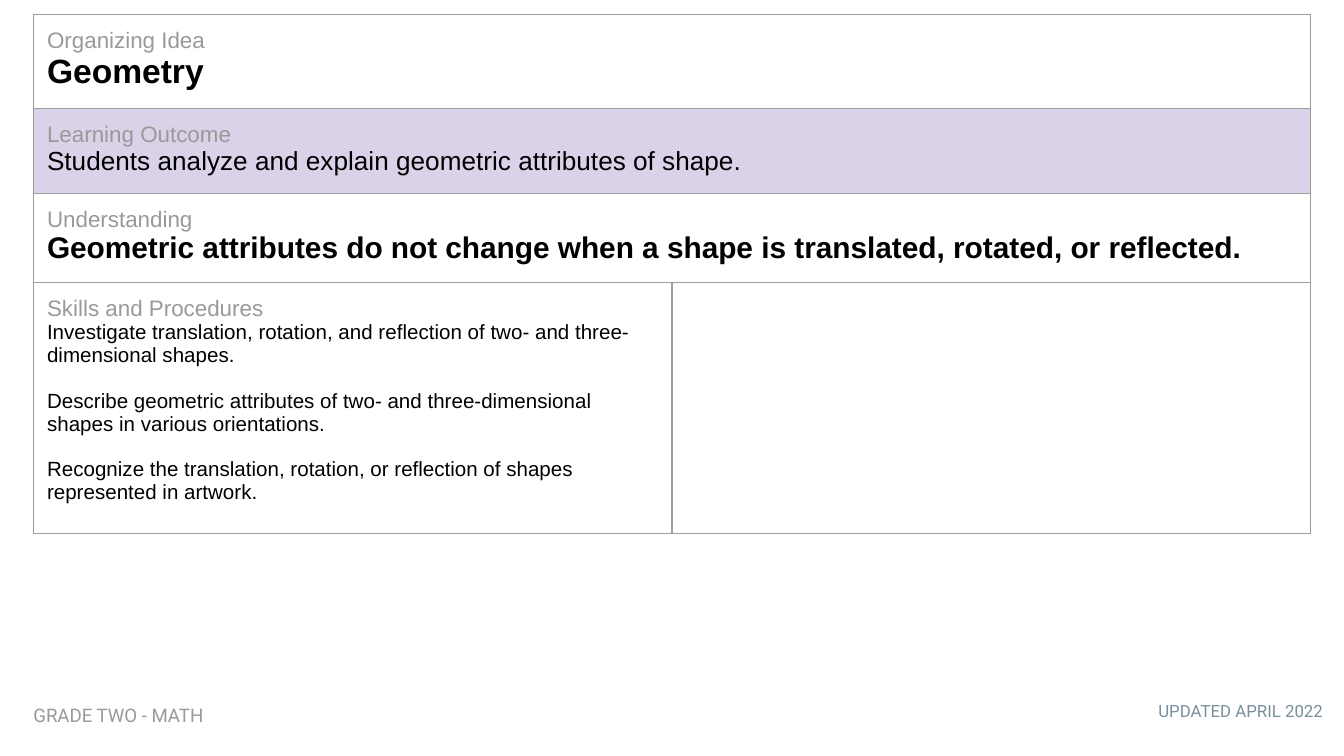
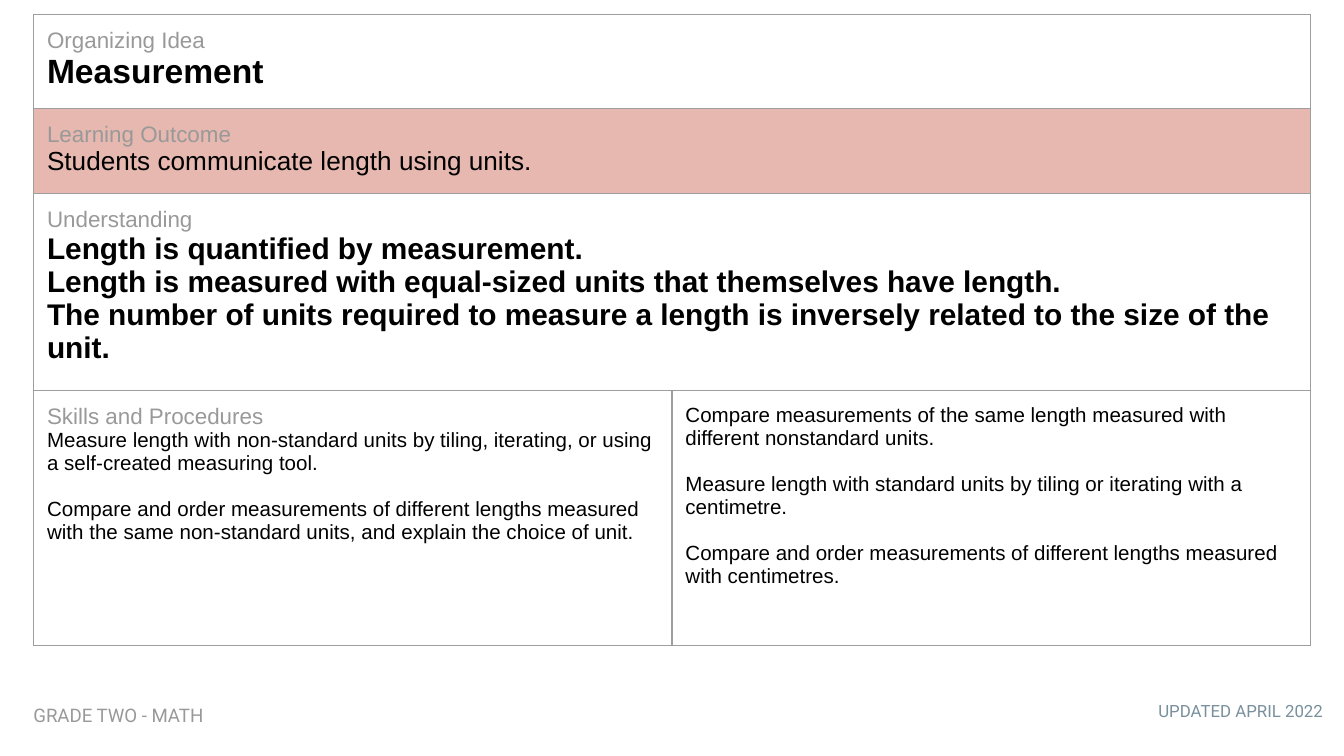
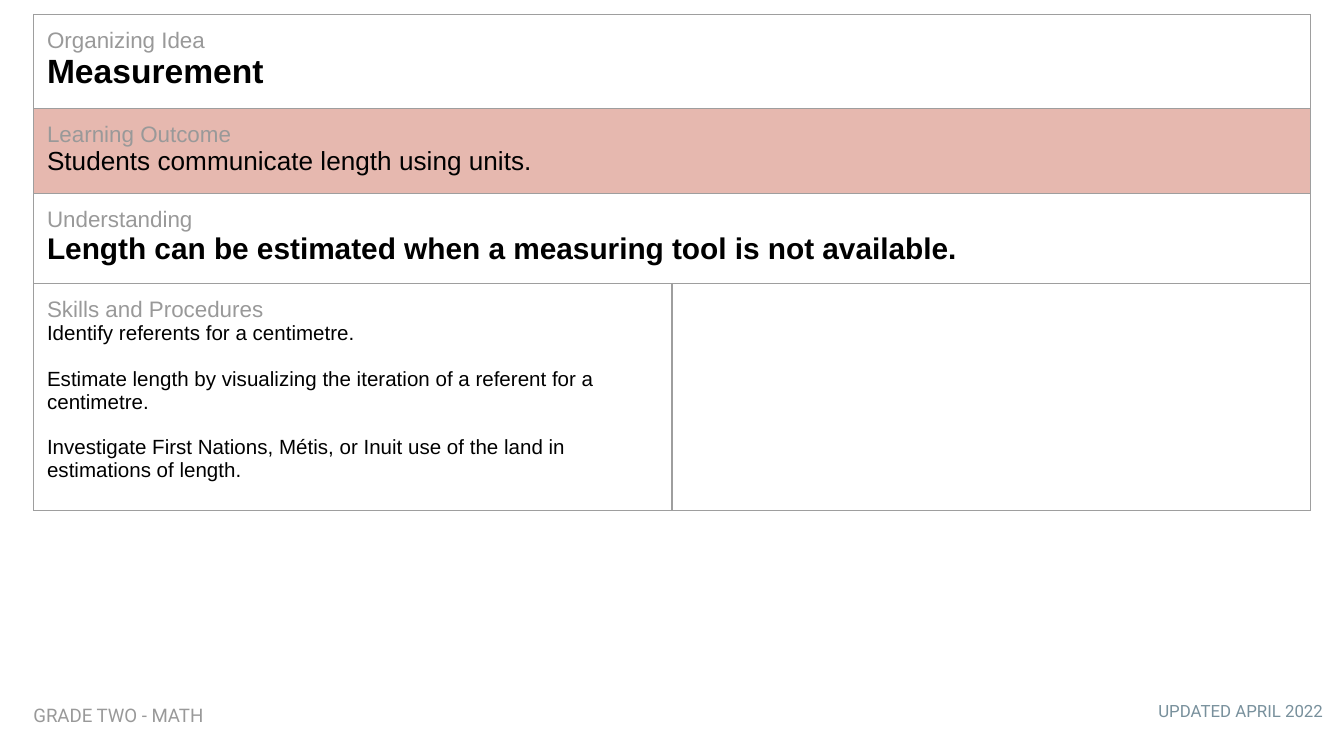
from dataclasses import dataclass

from lxml.etree import SubElement
from pptx import Presentation
from pptx.dml.color import RGBColor
from pptx.enum.text import MSO_AUTO_SIZE as AutoSize, PP_ALIGN as Align
from pptx.oxml.ns import qn
from pptx.util import Pt

# Shared look
BLACK, LABEL_GREY, BORDER_GREY, DATE_BLUE = "000000", "999999", "9E9E9E", "78909C"
GEOMETRY_FILL, MEASUREMENT_FILL = "D9D2E9", "E6B8AF"
BODY_FONT, FOOTER_FONT = "Arial", "Roboto"
INSET = 7.2
SLIDE_WIDTH, SLIDE_HEIGHT = 720, 405
TABLE_LEFT, TABLE_TOP, COLUMN_WIDTH = 18, 7.7, 342
IDEA_HEIGHT, OUTCOME_HEIGHT = 50.4, 45.5
LABEL_SIZE, SKILL_SIZE, SKILL_GAP = 12, 11, 12.3


@dataclass(frozen=True)
class Footer:
    text: str
    left: float
    top: float
    width: float
    height: float
    size: float
    color: str
    align: Align


@dataclass(frozen=True)
class Lesson:
    idea: str
    outcome: str
    fill: str
    understandings: tuple[str, ...]
    understanding_height: float
    skills: tuple[str, ...]
    skills_height: float
    more_skills: tuple[str, ...] = ()


FOOTERS = (
    Footer("UPDATED APRIL 2022", 521.3, 370.1, 194.4, 25.2, 9, DATE_BLUE, Align.RIGHT),
    Footer("GRADE TWO - MATH", 10.8, 370.8, 216.7, 26.6, 10, LABEL_GREY, Align.LEFT),
)

LESSONS = (
    Lesson(
        "Geometry",
        "Students analyze and explain geometric attributes of shape.",
        GEOMETRY_FILL,
        ("Geometric attributes do not change when a shape is translated, rotated, or reflected.",),
        47.7,
        (
            "Investigate translation, rotation, and reflection of two- and three-dimensional shapes.",
            "Describe geometric attributes of two- and three-dimensional shapes in various orientations.",
            "Recognize the translation, rotation, or reflection of shapes represented in artwork.",
        ),
        134.5,
    ),
    Lesson(
        "Measurement",
        "Students communicate length using units.",
        MEASUREMENT_FILL,
        (
            "Length is quantified by measurement.",
            "Length is measured with equal-sized units that themselves have length.",
            "The number of units required to measure a length is inversely related to the size of the unit.",
        ),
        105.5,
        (
            "Measure length with non-standard units by tiling, iterating, or using a self-created measuring tool.",
            "Compare and order measurements of different lengths measured with the same non-standard units, "
            "and explain the choice of unit.",
        ),
        136.6,
        (
            "Compare measurements of the same length measured with different nonstandard units.",
            "Measure length with standard units by tiling or iterating with a centimetre.",
            "Compare and order measurements of different lengths measured with centimetres.",
        ),
    ),
    Lesson(
        "Measurement",
        "Students communicate length using units.",
        MEASUREMENT_FILL,
        ("Length can be estimated when a measuring tool is not available.",),
        47.7,
        (
            "Identify referents for a centimetre.",
            "Estimate length by visualizing the iteration of a referent for a centimetre.",
            "Investigate First Nations, Métis, or Inuit use of the land in estimations of length.",
        ),
        121.6,
    ),
)


def rgb(color: str) -> RGBColor:
    return RGBColor.from_string(color)


def write(frame, text: str, *, size: float, color: str = BLACK, bold: bool = False,
          font: str = BODY_FONT, align: Align = Align.LEFT, gap: float = 0,
          same_paragraph: bool = False) -> None:
    """Add text as a new paragraph, or after a line break in the last one."""
    paragraph = frame.paragraphs[-1]
    if same_paragraph:
        paragraph.add_line_break()
        line_break = paragraph._p.findall(qn("a:br"))[-1]
        SubElement(line_break, qn("a:rPr"), sz=str(LABEL_SIZE * 100))
    else:
        if paragraph.runs:
            paragraph = frame.add_paragraph()
        paragraph.alignment = align
        paragraph.space_before = Pt(gap)
    run = paragraph.add_run()
    run.text = text
    run.font.name, run.font.size, run.font.bold = font, Pt(size), bold
    run.font.color.rgb = rgb(color)


def set_insets(holder) -> None:
    holder.margin_left = holder.margin_right = Pt(INSET)
    holder.margin_top = holder.margin_bottom = Pt(INSET)


def draw_borders(cell) -> None:
    properties = cell._tc.get_or_add_tcPr()
    for position, side in enumerate(("lnL", "lnR", "lnT", "lnB")):
        line = SubElement(properties, qn(f"a:{side}"), w=str(Pt(0.75)))
        paint = SubElement(line, qn("a:solidFill"))
        SubElement(paint, qn("a:srgbClr"), val=BORDER_GREY)
        properties.insert(position, line)


def write_label(frame, label: str) -> None:
    write(frame, label, size=LABEL_SIZE, color=LABEL_GREY)


def write_skills(frame, skills: tuple[str, ...]) -> None:
    for index, skill in enumerate(skills):
        write(frame, skill, size=SKILL_SIZE, gap=SKILL_GAP if index else 0)


def add_lesson_table(slide, lesson: Lesson) -> None:
    heights = (IDEA_HEIGHT, OUTCOME_HEIGHT, lesson.understanding_height, lesson.skills_height)
    table = slide.shapes.add_table(
        len(heights), 2, Pt(TABLE_LEFT), Pt(TABLE_TOP), Pt(2 * COLUMN_WIDTH), Pt(sum(heights))
    ).table
    table.first_row = table.horz_banding = False
    for row, height in zip(table.rows, heights):
        row.height = Pt(height)
    for cell in table.iter_cells():
        set_insets(cell)
        cell.fill.background()
        draw_borders(cell)
    for row in range(3):
        table.cell(row, 0).merge(table.cell(row, 1))

    idea, outcome, understanding, skills = (
        table.cell(row, 0).text_frame for row in range(len(heights))
    )
    # Organizing idea
    write_label(idea, "Organizing Idea")
    write(idea, lesson.idea, size=18, bold=True, same_paragraph=True)
    # Learning outcome, on the colour of its idea
    for column in range(2):
        band = table.cell(1, column).fill
        band.solid()
        band.fore_color.rgb = rgb(lesson.fill)
    write_label(outcome, "Learning Outcome")
    write(outcome, lesson.outcome, size=14, same_paragraph=True)
    # Understanding
    write_label(understanding, "Understanding")
    for statement in lesson.understandings:
        write(understanding, statement, size=16, bold=True)
    # Skills and procedures, in two columns
    write_label(skills, "Skills and Procedures")
    write_skills(skills, lesson.skills)
    write_skills(table.cell(3, 1).text_frame, lesson.more_skills)


def add_footer(slide, footer: Footer) -> None:
    frame = slide.shapes.add_textbox(
        Pt(footer.left), Pt(footer.top), Pt(footer.width), Pt(footer.height)
    ).text_frame
    set_insets(frame)
    frame.word_wrap = True
    frame.auto_size = AutoSize.SHAPE_TO_FIT_TEXT
    write(frame, footer.text, size=footer.size, color=footer.color,
          font=FOOTER_FONT, align=footer.align)


def main() -> None:
    deck = Presentation()
    deck.slide_width, deck.slide_height = Pt(SLIDE_WIDTH), Pt(SLIDE_HEIGHT)
    blank = deck.slide_layouts[6]
    for lesson in LESSONS:
        slide = deck.slides.add_slide(blank)
        add_lesson_table(slide, lesson)
        for footer in FOOTERS:
            add_footer(slide, footer)
    deck.save("out.pptx")


if __name__ == "__main__":
    main()
